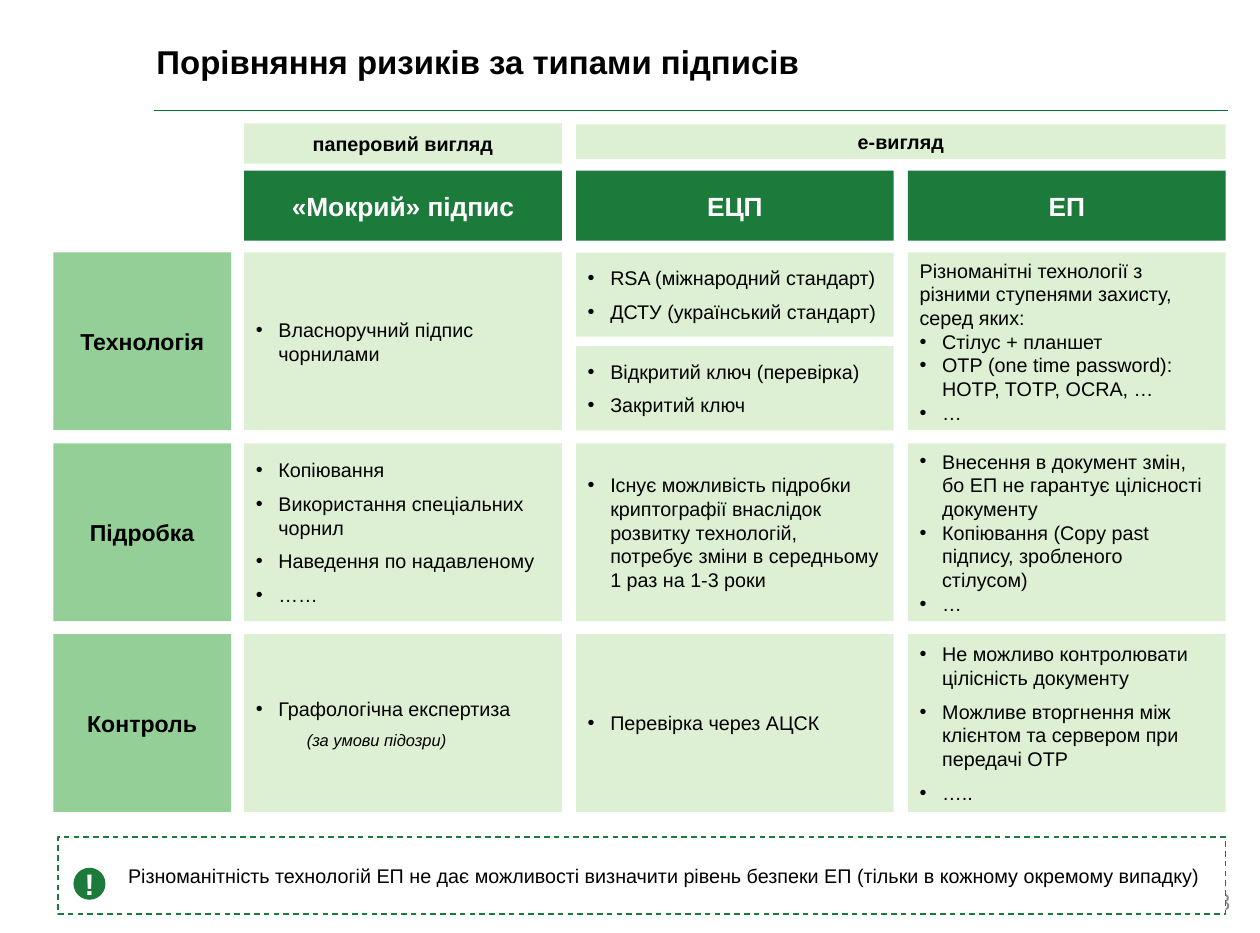
"""Build a slide that compares the risks of three signature types."""
from lxml.etree import SubElement
from pptx import Presentation
from pptx.dml.color import RGBColor
from pptx.enum.dml import MSO_LINE
from pptx.enum.shapes import MSO_CONNECTOR, MSO_SHAPE
from pptx.enum.text import MSO_ANCHOR, PP_ALIGN
from pptx.oxml.ns import qn
from pptx.util import Inches, Pt

PALE, MID, DARK, RULE = "DEF0D3", "93CF96", "1C7A3B", "007236"
BLACK, WHITE, GREY = "000000", "FFFFFF", "8C8C8C"
LEFT, STEP, WIDE = 2.06, 2.8, 2.68
TOP, PITCH, SIDE = 2.13, 1.61, 1.5
HALF = 0.71

HEADS = ["«Мокрий» підпис", "ЕЦП", "ЕП"]
ROWS = ["Технологія", "Підробка", "Контроль"]
CELLS = [
    (0, 0, 6, ["Власноручний підпис чорнилами"]),
    (0, 2, 0, ["Стілус + планшет",
               "ОТР (one time password): HOTP, TOTP, OCRA, …", "…"]),
    (1, 0, 6, ["Копіювання", "Використання спеціальних чорнил",
               "Наведення по надавленому", "……"]),
    (1, 1, 6, ["Існує можливість підробки криптографії внаслідок розвитку "
               "технологій, потребує зміни в середньому 1 раз на 1-3 роки"]),
    (1, 2, 0, ["Внесення в документ змін, бо ЕП не гарантує цілісності документу",
               "Копіювання (Copy past підпису, зробленого стілусом)", "…"]),
    (2, 0, 6, ["Графологічна експертиза"]),
    (2, 1, 6, ["Перевірка через АЦСК"]),
    (2, 2, 6, ["Не можливо контролювати цілісність документу",
               "Можливе вторгнення між клієнтом та сервером при передачі ОТР",
               "….."]),
]
KEYS = [["RSA (міжнародний стандарт)", "ДСТУ (український стандарт)"],
        ["Відкритий ключ (перевірка)", "Закритий ключ"]]
INTRO = "Різноманітні технології з різними ступенями захисту, серед яких:"
NOTE = "(за умови підозри)"
ALERT = ("Різноманітність технологій ЕП не дає можливості визначити рівень "
         "безпеки ЕП (тільки в кожному окремому випадку)")


def tint(code):
    """Turn a hex string into a colour."""
    return RGBColor.from_string(code)


def write(frame, text, size=12, color=BLACK, bold=False, slant=False,
          align=PP_ALIGN.LEFT, gap=0, indent=0, bullet=False):
    """Add one paragraph, using the empty first one when it is free."""
    first = not frame.paragraphs[0].runs
    para = frame.paragraphs[0] if first else frame.add_paragraph()
    props = para._p.get_or_add_pPr()
    if bullet:
        indent = 0.19
        props.set("indent", str(-Inches(indent)))
        SubElement(props, qn("a:buFont"), typeface="Arial")
        SubElement(props, qn("a:buChar"), char="•")
    props.set("marL", str(Inches(indent)))
    para.alignment = align
    para.space_before = Pt(0 if first else gap)
    run = para.add_run()
    run.text = text
    font = run.font
    font.name, font.size, font.bold, font.italic = "Arial", Pt(size), bold, slant
    font.color.rgb = tint(color)


def setup(frame, anchor, inset):
    """Set wrapping, anchor and margins, and give the frame back."""
    frame.word_wrap = True
    frame.vertical_anchor = anchor
    frame.margin_left = frame.margin_right = Inches(inset[0])
    frame.margin_top = frame.margin_bottom = Inches(inset[1])
    return frame


def label(slide, box, anchor, inset):
    """Add a text box and return its frame."""
    shape = slide.shapes.add_textbox(*map(Inches, box))
    return setup(shape.text_frame, anchor, inset)


def block(slide, box, fill, kind=MSO_SHAPE.RECTANGLE, edge=None, inset=(0.1, 0.05)):
    """Add a filled shape and return its frame."""
    shape = slide.shapes.add_shape(kind, *map(Inches, box))
    shape.shadow.inherit = False
    shape.fill.solid()
    shape.fill.fore_color.rgb = tint(fill)
    if edge:
        shape.line.color.rgb = tint(edge)
        shape.line.width = Pt(0.85)
        shape.line.dash_style = MSO_LINE.DASH
    else:
        shape.line.fill.background()
    return setup(shape.text_frame, MSO_ANCHOR.MIDDLE, inset)


def head(slide, box, fill, text, size, color=BLACK):
    """Add a block with one bold centred caption."""
    write(block(slide, box, fill), text, size, color, bold=True,
          align=PP_ALIGN.CENTER)


def points(frame, items, gap=6):
    """Write a bulleted list."""
    for item in items:
        write(frame, item, gap=gap, bullet=True)


def rule(slide, start, end, y):
    """Draw the thin line below the title."""
    line = slide.shapes.add_connector(
        MSO_CONNECTOR.STRAIGHT, Inches(start), Inches(y), Inches(end), Inches(y))
    line.line.color.rgb = tint(RULE)
    line.line.width = Pt(0.75)
    SubElement(line._element.spPr, qn("a:effectLst"))


def banner(slide):
    """Add the title, rule and page number."""
    rule(slide, 1.3, 10.36, 0.93)
    title = label(slide, (1.32, 0, 8.92, 1.04), MSO_ANCHOR.MIDDLE, (0, 0))
    write(title, "Порівняння ризиків за типами підписів", 20, bold=True)
    page = label(slide, (9.57, 7.25, 0.92, 0.52), MSO_ANCHOR.BOTTOM, (0.11, 0.05))
    write(page, "3", 14, GREY, align=PP_ALIGN.RIGHT)


def grid(slide):
    """Add the headings and the cells of the comparison."""
    head(slide, (LEFT, 1.04, WIDE, 0.34), PALE, "паперовий вигляд", 12)
    head(slide, (LEFT + STEP, 1.05, STEP + WIDE, 0.29), PALE, "е-вигляд", 12)
    for col, text in enumerate(HEADS):
        head(slide, (LEFT + col * STEP, 1.44, WIDE, 0.59), DARK, text, 16, WHITE)
    for row, text in enumerate(ROWS):
        head(slide, (0.45, TOP + row * PITCH, SIDE, SIDE), MID, text, 14)
    for row, col, gap, items in CELLS:
        box = (LEFT + col * STEP, TOP + row * PITCH, WIDE, SIDE)
        frame = block(slide, box, PALE)
        if (row, col) == (0, 2):
            write(frame, INTRO)
        points(frame, items, gap)
        if (row, col) == (2, 0):
            write(frame, NOTE, 10, slant=True, gap=6, indent=0.43)
    for part, items in enumerate(KEYS):
        y = TOP + part * (SIDE - HALF)
        points(block(slide, (LEFT + STEP, y, WIDE, HALF), PALE), items)


def alert(slide):
    """Add the dashed warning at the foot."""
    frame = block(slide, (0.49, 7.06, 9.85, 0.65), WHITE, edge=DARK,
                  inset=(0.08, 0.04))
    write(frame, ALERT, indent=0.51)
    mark = block(slide, (0.62, 7.32, 0.27, 0.27), DARK, MSO_SHAPE.OVAL,
                 inset=(0, 0))
    write(mark, "!", 18, WHITE, bold=True, align=PP_ALIGN.CENTER)


def main():
    """Build and save the deck."""
    deck = Presentation()
    deck.slide_width, deck.slide_height = Inches(10.63), Inches(7.87)
    slide = deck.slides.add_slide(deck.slide_layouts[6])
    banner(slide)
    grid(slide)
    alert(slide)
    deck.save("out.pptx")


if __name__ == "__main__":
    main()
